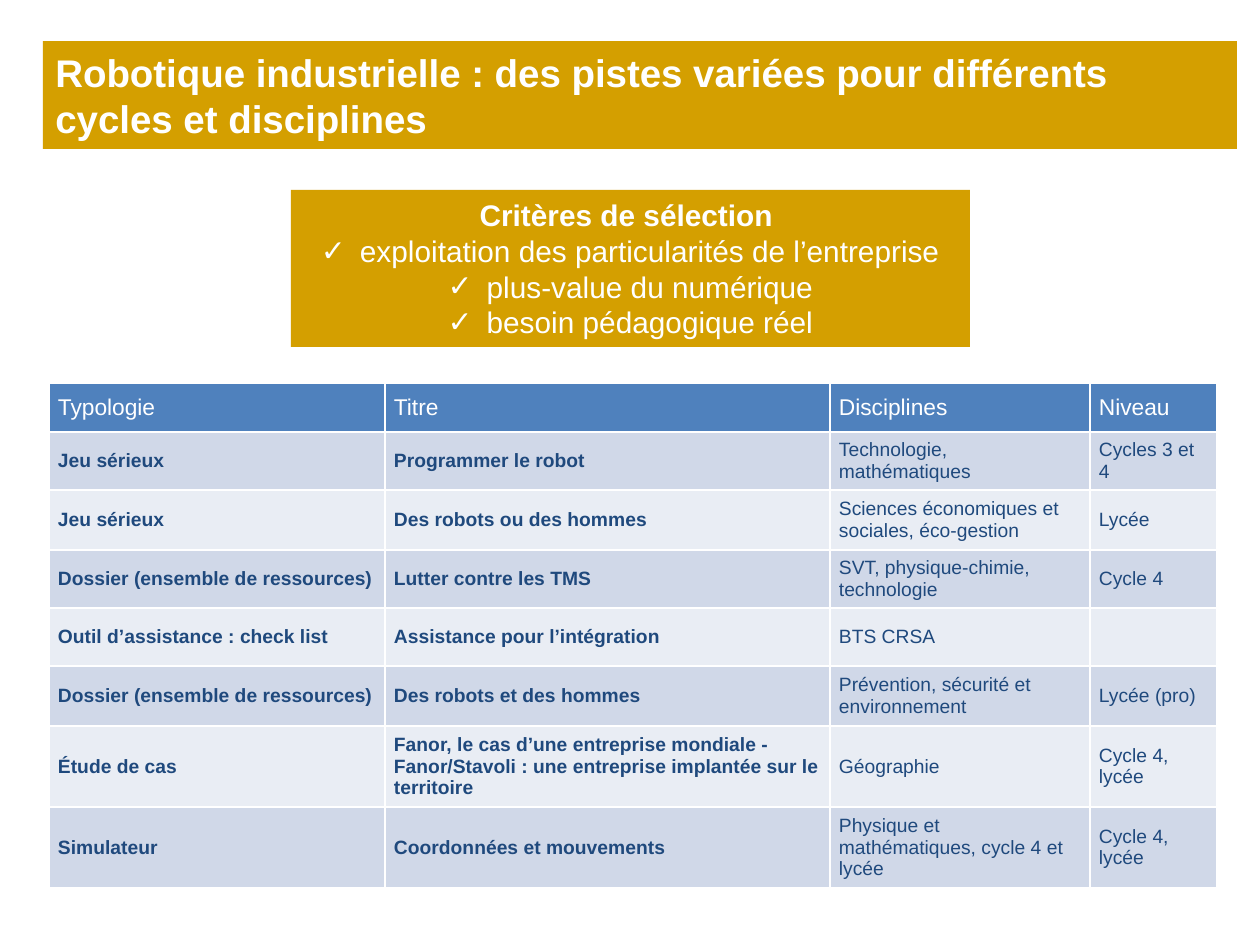
"""Build the slide on industrial robotics for various cycles and subjects."""
from typing import NamedTuple

from lxml.etree import SubElement
from pptx import Presentation
from pptx.dml.color import RGBColor
from pptx.enum.shapes import MSO_SHAPE
from pptx.enum.text import MSO_ANCHOR, PP_ALIGN
from pptx.oxml.ns import qn
from pptx.util import Emu, Pt

GOLD = RGBColor(0xD4, 0x9F, 0x00)
WHITE = RGBColor(0xFF, 0xFF, 0xFF)
BLUE = RGBColor(0x4F, 0x81, 0xBD)
NAVY = RGBColor(0x1F, 0x49, 0x7D)
BANDS = (RGBColor(0xE9, 0xED, 0xF4), RGBColor(0xD0, 0xD8, 0xE8))
FONT = "Arial"


class Box(NamedTuple):
    left: int
    top: int
    width: int
    height: int
    size: int
    align: PP_ALIGN
    lines: tuple[str, ...]


class Row(NamedTuple):
    height: int
    kind: str
    title: str
    fields: str
    level: str


TITLE = Box(43, 41, 1194, 108, 22, PP_ALIGN.LEFT, (
    "Robotique industrielle : des pistes variées pour différents cycles et disciplines",
))
RULES = Box(291, 190, 679, 157, 17, PP_ALIGN.CENTER, (
    "Critères de sélection ",
    "exploitation des particularités de l’entreprise",
    "plus-value du numérique",
    "besoin pédagogique réel",
))
WIDTHS = (336, 445, 260, 127)
ROWS = (
    Row(49, "Typologie", "Titre", "Disciplines", "Niveau"),
    Row(58, "Jeu sérieux", "Programmer le robot", "Technologie, mathématiques", "Cycles 3 et 4"),
    Row(60, "Jeu sérieux", "Des robots ou des hommes",
        "Sciences économiques et sociales, éco-gestion", "Lycée"),
    Row(58, "Dossier (ensemble de ressources)", "Lutter contre les TMS",
        "SVT, physique-chimie, technologie", "Cycle 4"),
    Row(58, "Outil d’assistance : check list", "Assistance pour l’intégration", "BTS CRSA", ""),
    Row(60, "Dossier (ensemble de ressources)", "Des robots et des hommes",
        "Prévention, sécurité et environnement", "Lycée (pro)"),
    Row(81, "Étude de cas",
        "Fanor, le cas d’une entreprise mondiale - Fanor/Stavoli : "
        "une entreprise implantée sur le territoire",
        "Géographie", "Cycle 4, lycée"),
    Row(81, "Simulateur", "Coordonnées et mouvements",
        "Physique et mathématiques, cycle 4 et lycée", "Cycle 4, lycée"),
)


def px(count: int) -> Emu:
    return Emu(round(count * 914400 / 126))


def style(para, size: int, color: RGBColor, bold: bool) -> None:
    for run in para.runs:
        font = run.font
        font.name, font.size, font.bold = FONT, Pt(size), bold
        font.color.rgb = color


def tick(para) -> None:
    props = para._p.get_or_add_pPr()
    props.set("marL", str(px(39)))
    props.set("indent", str(-px(39)))
    SubElement(props, qn("a:buFont")).set("typeface", FONT)
    SubElement(props, qn("a:buChar")).set("char", "✓")


def draw_box(slide, box: Box) -> None:
    shape = slide.shapes.add_shape(MSO_SHAPE.RECTANGLE, *map(px, box[:4]))
    shape.shadow.inherit = False
    shape.fill.solid()
    shape.fill.fore_color.rgb = GOLD
    shape.line.fill.background()
    frame = shape.text_frame
    frame.word_wrap = True
    frame.vertical_anchor = MSO_ANCHOR.MIDDLE
    frame.text = "\n".join(box.lines)
    for index, para in enumerate(frame.paragraphs):
        para.alignment = box.align
        style(para, box.size, WHITE, index == 0)
        if index:
            tick(para)


def fill_cell(cell, text: str, row: int, col: int) -> None:
    head = row == 0
    cell.fill.solid()
    cell.fill.fore_color.rgb = BLUE if head else BANDS[row % 2]
    cell.vertical_anchor = MSO_ANCHOR.MIDDLE
    cell.margin_left = cell.margin_right = px(9)
    cell.margin_top = cell.margin_bottom = px(6)
    cell.text_frame.text = text
    para = cell.text_frame.paragraphs[0]
    style(para, 13 if head else 11, WHITE if head else NAVY, not head and col < 2)


def draw_table(slide, left: int, top: int) -> None:
    width, height = sum(WIDTHS), sum(row.height for row in ROWS)
    table = slide.shapes.add_table(
        len(ROWS), len(WIDTHS), *map(px, (left, top, width, height))).table
    for column, size in zip(table.columns, WIDTHS):
        column.width = px(size)
    for r, row in enumerate(ROWS):
        table.rows[r].height = px(row.height)
        for c, text in enumerate(row[1:]):
            fill_cell(table.cell(r, c), text, r, c)


def main() -> None:
    deck = Presentation()
    deck.slide_width, deck.slide_height = px(1260), px(945)
    slide = deck.slides.add_slide(deck.slide_layouts[6])
    draw_box(slide, TITLE)
    draw_table(slide, 49, 383)
    draw_box(slide, RULES)
    deck.save("out.pptx")


if __name__ == "__main__":
    main()
